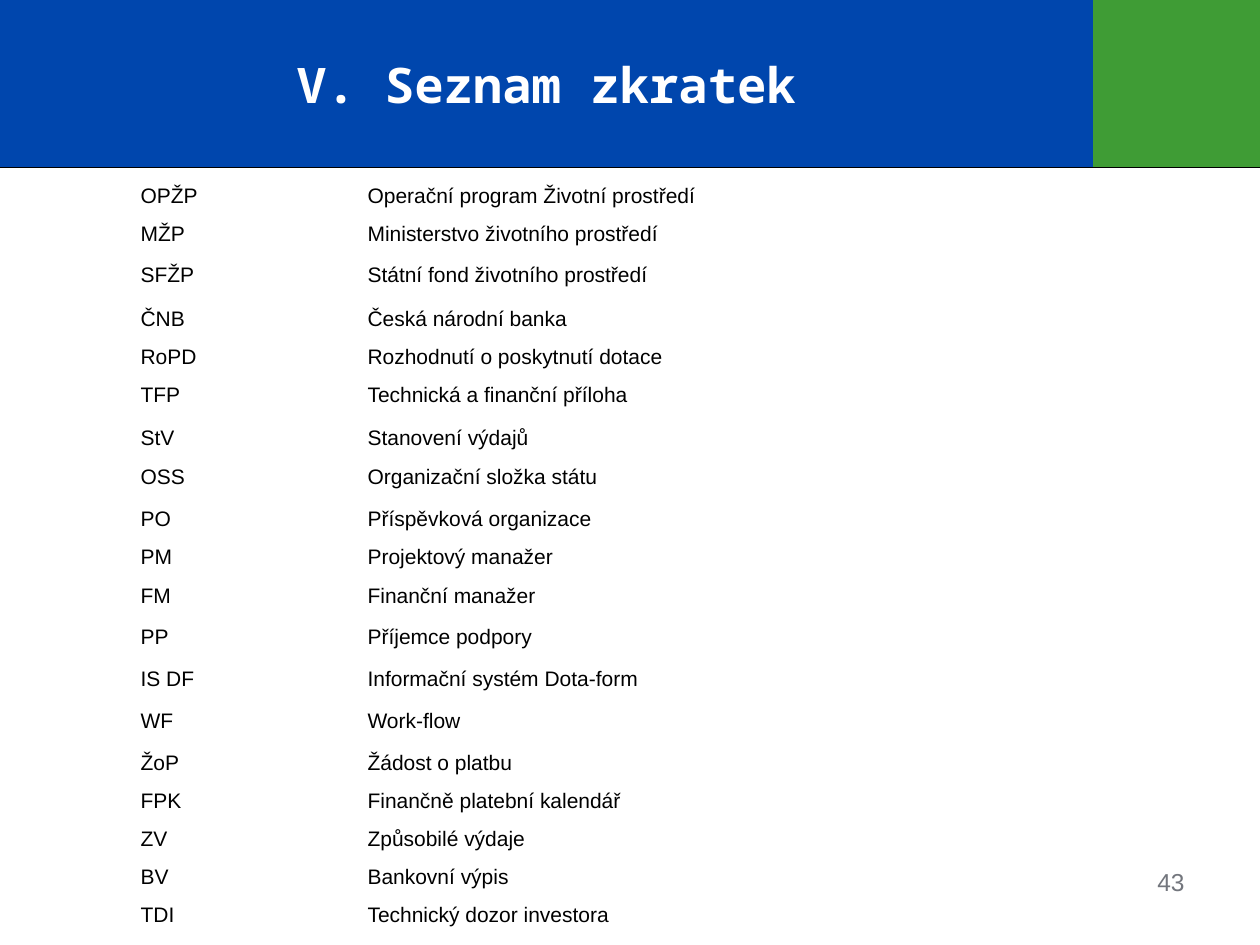
from dataclasses import dataclass

from pptx import Presentation
from pptx.dml.color import RGBColor
from pptx.enum.shapes import MSO_SHAPE
from pptx.enum.text import MSO_ANCHOR, PP_ALIGN
from pptx.util import Emu, Pt

RECT = MSO_SHAPE.RECTANGLE
MIDDLE, TOP = MSO_ANCHOR.MIDDLE, MSO_ANCHOR.TOP
LEFT, CENTER, RIGHT = PP_ALIGN.LEFT, PP_ALIGN.CENTER, PP_ALIGN.RIGHT

PX_PER_INCH = 126
COLORS = {
    "blue": "0046AD",
    "green": "3F9C35",
    "white": "FFFFFF",
    "black": "000000",
    "gray": "73767D",
}


@dataclass(frozen=True)
class Box:
    x: int
    y: int
    w: int
    h: int


@dataclass(frozen=True)
class Style:
    font: str
    size: int
    color: str
    bold: bool = False
    align: PP_ALIGN = LEFT


@dataclass(frozen=True)
class Band:
    box: Box
    color: str
    outline: str | None = None


@dataclass(frozen=True)
class Entry:
    short: str
    meaning: str
    height: int


TITLE_STYLE = Style("Noto Sans Mono", 28, "white", True, CENTER)
NUMBER_STYLE = Style("Arial", 14, "gray", align=RIGHT)
CELL_STYLE = Style("Arial", 12, "black")

BANDS = [
    Band(Box(0, 0, 1260, 167), "blue", "black"),
    Band(Box(1093, 0, 167, 167), "green"),
]
TITLE_BOX = Box(0, 0, 1093, 167)
NUMBER_BOX = Box(903, 861, 294, 65)
TABLE_X, TABLE_Y = 128, 178
COLUMNS = (227, 601)

ENTRIES = [
    Entry("OPŽP", "Operační program Životní prostředí", 38),
    Entry("MŽP", "Ministerstvo životního prostředí", 41),
    Entry("SFŽP", "Státní fond životního prostředí", 44),
    Entry("ČNB", "Česká národní banka", 38),
    Entry("RoPD", "Rozhodnutí o poskytnutí dotace", 38),
    Entry("TFP", "Technická a finanční příloha", 43),
    Entry("StV", "Stanovení výdajů", 39),
    Entry("OSS", "Organizační složka státu", 42),
    Entry("PO", "Příspěvková organizace", 38),
    Entry("PM", "Projektový manažer", 39),
    Entry("FM", "Finanční manažer", 41),
    Entry("PP", "Příjemce podpory", 42),
    Entry("IS DF", "Informační systém Dota-form", 42),
    Entry("WF", "Work-flow", 42),
    Entry("ŽoP", "Žádost o platbu", 38),
    Entry("FPK", "Finančně platební kalendář", 38),
    Entry("ZV", "Způsobilé výdaje", 38),
    Entry("BV", "Bankovní výpis", 38),
    Entry("TDI", "Technický dozor investora", 42),
]


def px(n: int) -> Emu:
    return Emu(round(n * 914400 / PX_PER_INCH))


def rgb(name: str) -> RGBColor:
    return RGBColor.from_string(COLORS[name])


def place(sp, box: Box) -> None:
    sp.left, sp.top = px(box.x), px(box.y)
    sp.width, sp.height = px(box.w), px(box.h)


def write(tf, text: str, style: Style) -> None:
    p = tf.paragraphs[0]
    p.alignment = style.align
    r = p.add_run()
    r.text = text
    r.font.name = style.font
    r.font.size = Pt(style.size)
    r.font.bold = style.bold
    r.font.color.rgb = rgb(style.color)


def add_band(slide, band: Band) -> None:
    b = band.box
    sp = slide.shapes.add_shape(RECT, px(b.x), px(b.y), px(b.w), px(b.h))
    sp.shadow.inherit = False
    sp.fill.solid()
    sp.fill.fore_color.rgb = rgb(band.color)
    if band.outline:
        sp.line.color.rgb = rgb(band.outline)
        sp.line.width = Pt(0.75)
    else:
        sp.line.fill.background()


def set_title(slide, text: str) -> None:
    sp = slide.shapes.title
    sp.element.getparent().append(sp.element)
    place(sp, TITLE_BOX)
    sp.fill.solid()
    sp.fill.fore_color.rgb = rgb("blue")
    tf = sp.text_frame
    tf.word_wrap = True
    tf.vertical_anchor = MIDDLE
    write(tf, text, TITLE_STYLE)


def add_number(slide, text: str) -> None:
    b = NUMBER_BOX
    sp = slide.shapes.add_textbox(px(b.x), px(b.y), px(b.w), px(b.h))
    tf = sp.text_frame
    tf.word_wrap = True
    tf.vertical_anchor = TOP
    write(tf, text, NUMBER_STYLE)


def add_glossary(slide, entries: list[Entry]) -> None:
    height = sum(e.height for e in entries)
    table = slide.shapes.add_table(
        len(entries), len(COLUMNS), px(TABLE_X), px(TABLE_Y), px(sum(COLUMNS)), px(height)
    ).table
    table.first_row = False
    table.horz_banding = False
    for col, w in zip(table.columns, COLUMNS):
        col.width = px(w)
    for row, e in zip(table.rows, entries):
        row.height = px(e.height)
        for cell, text in zip(row.cells, (e.short, e.meaning)):
            cell.fill.background()
            cell.vertical_anchor = TOP
            write(cell.text_frame, text, CELL_STYLE)


def main() -> None:
    prs = Presentation()
    prs.slide_width, prs.slide_height = px(1260), px(945)
    slide = prs.slides.add_slide(prs.slide_layouts.get_by_name("Title Only"))
    for band in BANDS:
        add_band(slide, band)
    set_title(slide, "V. Seznam zkratek")
    add_number(slide, "43")
    add_glossary(slide, ENTRIES)
    prs.save("out.pptx")


if __name__ == "__main__":
    main()
